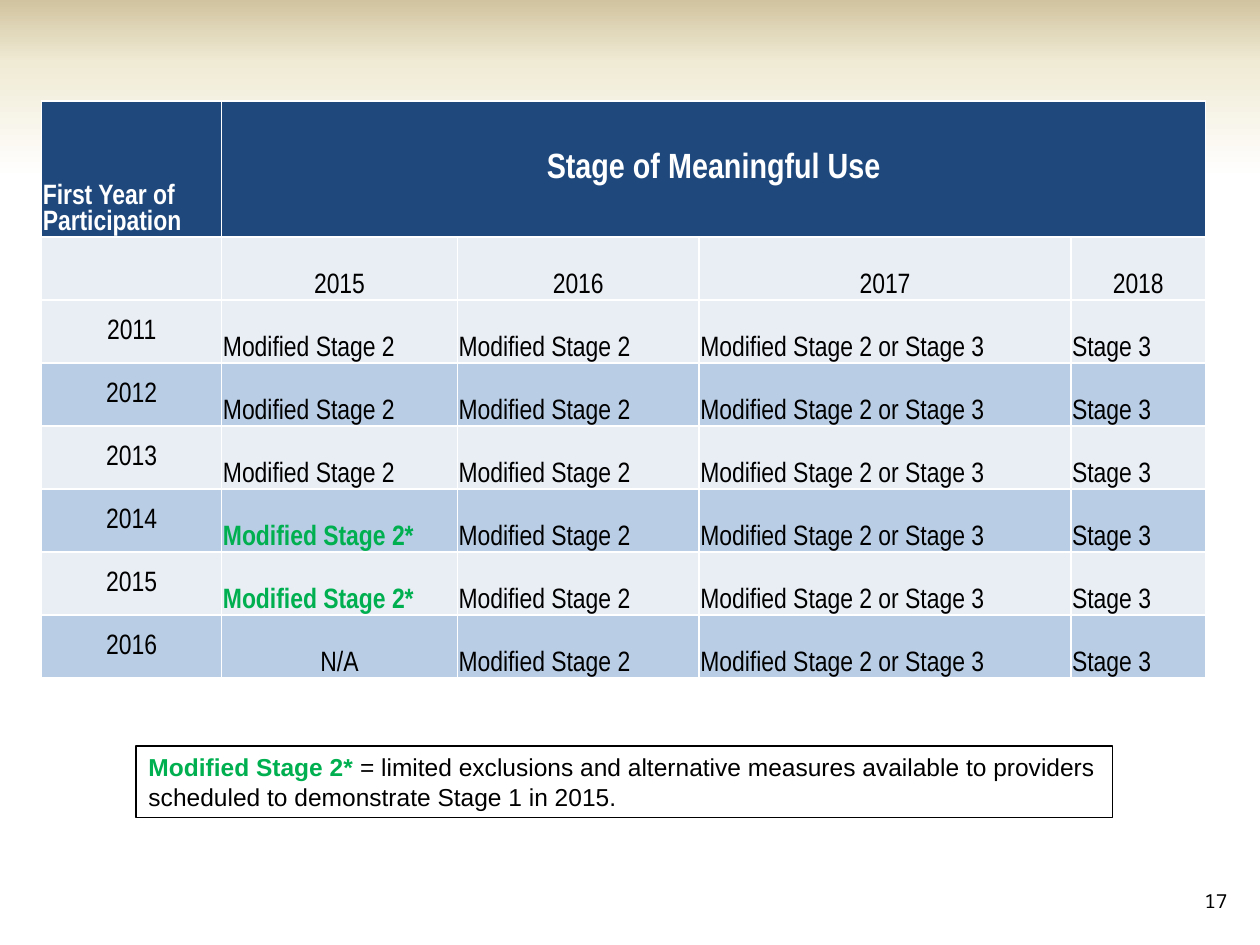
import dataclasses

import lxml.etree
import pptx
import pptx.dml.color
import pptx.enum.shapes
import pptx.enum.text
import pptx.oxml
import pptx.oxml.ns
import pptx.util

ANCHOR = pptx.enum.text.MSO_ANCHOR
ALIGN = pptx.enum.text.PP_ALIGN
COLUMNS, ROWS = 1000, 750


@dataclasses.dataclass(frozen=True)
class Theme:
    white: str = "FFFFFF"
    black: str = "000000"
    navy: str = "1F497D"
    pale: str = "E9EDF4"
    blue: str = "B9CDE5"
    green: str = "00B050"
    band_stops: tuple = ((0, "FFFFFF"), (65, "F0EBD5"), (100, "D1C39F"))
    table_font: str = "Arial Narrow"
    note_font: str = "Arial"
    number_font: str = "Noto Sans Mono"
    heading_size: int = 20
    table_size: int = 16
    note_size: int = 14
    number_size: int = 11


THEME = Theme()
COLUMN_WIDTHS = (143, 187, 192, 295, 107)
HEADER_HEIGHT, ROW_HEIGHT = 108, 50
REPORTING_YEARS = ("2015", "2016", "2017", "2018")
MODIFIED = "Modified Stage 2"
EXCLUSION = "Modified Stage 2*"
LATER_STAGES = (MODIFIED, "Modified Stage 2 or Stage 3", "Stage 3")
FIRST_STAGES = {
    "2011": MODIFIED,
    "2012": MODIFIED,
    "2013": MODIFIED,
    "2014": EXCLUSION,
    "2015": EXCLUSION,
    "2016": "N/A",
}


def on_grid(presentation, left, top, width, height):
    column = presentation.slide_width / COLUMNS
    row = presentation.slide_height / ROWS
    return (round(left * column), round(top * row),
            round(width * column), round(height * row))


def rgb(color):
    return pptx.dml.color.RGBColor.from_string(color)


def add_run(paragraph, text, font, size, color, bold=False):
    run = paragraph.add_run()
    run.text = text
    run.font.name = font
    run.font.size = pptx.util.Pt(size)
    run.font.bold = bold
    run.font.color.rgb = rgb(color)


def add_rectangle(slide, bounds):
    rectangle = slide.shapes.add_shape(
        pptx.enum.shapes.MSO_SHAPE.RECTANGLE, *bounds)
    rectangle.shadow.inherit = False
    return rectangle


def add_top_band(slide, bounds):
    band = add_rectangle(slide, bounds)
    band.line.fill.background()
    band.fill.gradient()
    band.fill.gradient_angle = 90
    stops = band.fill._fill._gradFill.find(pptx.oxml.ns.qn("a:gsLst"))
    for stop in list(stops):
        stops.remove(stop)
    for position, color in THEME.band_stops:
        stop = lxml.etree.SubElement(
            stops, pptx.oxml.ns.qn("a:gs"), pos=str(position * 1000))
        lxml.etree.SubElement(
            stop, pptx.oxml.ns.qn("a:srgbClr"), val=color)


def add_borders(cell):
    properties = cell._tc.get_or_add_tcPr()
    for side in ("lnL", "lnR", "lnT", "lnB"):
        properties.append(pptx.oxml.parse_xml(
            f'<a:{side} {pptx.oxml.ns.nsdecls("a")} w="12700"><a:solidFill>'
            f'<a:srgbClr val="{THEME.white}"/></a:solidFill></a:{side}>'))


def style_cell(cell, fill):
    add_borders(cell)
    cell.fill.solid()
    cell.fill.fore_color.rgb = rgb(fill)
    cell.margin_left = cell.margin_right = pptx.util.Inches(0.01)
    cell.margin_top = pptx.util.Inches(0.01)
    cell.margin_bottom = 0
    cell.vertical_anchor = ANCHOR.BOTTOM


def write_cell(cell, text, align=ALIGN.LEFT, anchor=ANCHOR.BOTTOM,
               size=THEME.table_size, color=THEME.black, bold=False):
    cell.vertical_anchor = anchor
    paragraph = cell.text_frame.paragraphs[0]
    paragraph.alignment = align
    add_run(paragraph, text, THEME.table_font, size, color, bold)


def write_headings(table):
    write_cell(table.cell(0, 0), "First Year of Participation",
               color=THEME.white, bold=True)
    table.cell(0, 1).merge(table.cell(0, len(COLUMN_WIDTHS) - 1))
    write_cell(table.cell(0, 1), "Stage of Meaningful Use", ALIGN.CENTER,
               ANCHOR.MIDDLE, THEME.heading_size, THEME.white, True)
    for column, year in enumerate(REPORTING_YEARS, 1):
        write_cell(table.cell(1, column), year, ALIGN.CENTER)


def write_stages(table):
    for row, (year, first_stage) in enumerate(FIRST_STAGES.items(), 2):
        write_cell(table.cell(row, 0), year, ALIGN.CENTER, ANCHOR.MIDDLE)
        excluded = first_stage == EXCLUSION
        write_cell(table.cell(row, 1), first_stage,
                   ALIGN.CENTER if first_stage == "N/A" else ALIGN.LEFT,
                   color=THEME.green if excluded else THEME.black,
                   bold=excluded)
        for column, stage in enumerate(LATER_STAGES, 2):
            write_cell(table.cell(row, column), stage)


def add_stage_table(presentation, slide):
    heights = [HEADER_HEIGHT] + [ROW_HEIGHT] * (len(FIRST_STAGES) + 1)
    bounds = on_grid(presentation, 33, 80, sum(COLUMN_WIDTHS), sum(heights))
    table = slide.shapes.add_table(
        len(heights), len(COLUMN_WIDTHS), *bounds).table
    for column, width in zip(table.columns, COLUMN_WIDTHS):
        column.width = on_grid(presentation, 0, 0, width, 0)[2]
    fills = [THEME.navy, THEME.pale] + [THEME.pale, THEME.blue] * 3
    for row, height, fill in zip(table.rows, heights, fills):
        row.height = on_grid(presentation, 0, 0, 0, height)[3]
        for cell in row.cells:
            style_cell(cell, fill)
    write_headings(table)
    write_stages(table)


def add_note(slide, bounds):
    note = add_rectangle(slide, bounds)
    note.fill.background()
    note.line.color.rgb = rgb(THEME.black)
    note.line.width = pptx.util.Pt(0.75)
    note.text_frame.word_wrap = True
    note.text_frame.vertical_anchor = ANCHOR.TOP
    paragraph = note.text_frame.paragraphs[0]
    paragraph.alignment = ALIGN.LEFT
    add_run(paragraph, EXCLUSION, THEME.note_font, THEME.note_size,
            THEME.green, True)
    add_run(paragraph, " = limited exclusions and alternative measures "
            "available to providers scheduled to demonstrate Stage 1 in 2015.",
            THEME.note_font, THEME.note_size, THEME.black)


def add_page_number(slide, bounds):
    number = slide.shapes.add_textbox(*bounds)
    number.text_frame.word_wrap = True
    add_run(number.text_frame.paragraphs[0], "17", THEME.number_font,
            THEME.number_size, THEME.black)


def main():
    presentation = pptx.Presentation()
    presentation.slide_width = pptx.util.Inches(10)
    presentation.slide_height = pptx.util.Inches(7.5)
    slide = presentation.slides.add_slide(presentation.slide_layouts[6])
    add_top_band(slide, on_grid(presentation, 0, 0, COLUMNS, 142))
    add_stage_table(presentation, slide)
    add_note(slide, on_grid(presentation, 108, 592, 775, 57))
    add_page_number(slide, on_grid(presentation, 946, 701, 40, 40))
    presentation.save("out.pptx")


if __name__ == "__main__":
    main()
